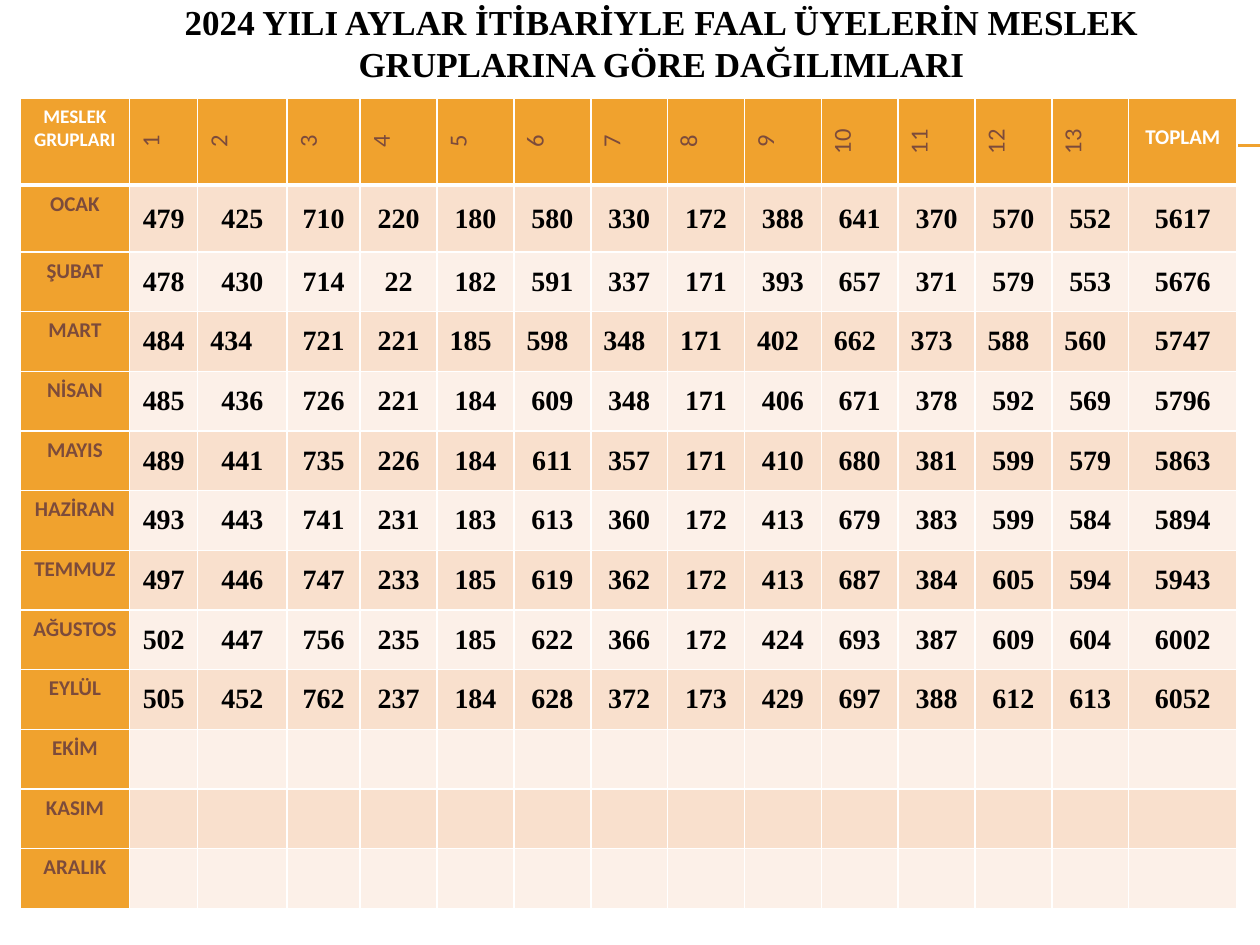
import pptx
import pptx.dml.color
import pptx.enum.shapes
import pptx.enum.text
import pptx.oxml.ns
import pptx.util
from lxml import etree

Inches = pptx.util.Inches
Pt = pptx.util.Pt
RGBColor = pptx.dml.color.RGBColor
ALIGN = pptx.enum.text.PP_ALIGN
ANCHOR = pptx.enum.text.MSO_ANCHOR

ORANGE = RGBColor(0xF0, 0xA2, 0x2E)
BROWN = RGBColor(0x7C, 0x4B, 0x3B)
PEACH = RGBColor(0xF9, 0xE0, 0xCD)
CREAM = RGBColor(0xFC, 0xF0, 0xE8)
WHITE = RGBColor(0xFF, 0xFF, 0xFF)
BLACK = RGBColor(0, 0, 0)

TITLE = "2024 YILI AYLAR İTİBARİYLE FAAL ÜYELERİN MESLEK GRUPLARINA GÖRE DAĞILIMLARI"
MONTHS = [
    ("OCAK", "479 425 710 220 180 580 330 172 388 641 370 570 552 5617"),
    ("ŞUBAT", "478 430 714 22 182 591 337 171 393 657 371 579 553 5676"),
    ("MART", "484 434 721 221 185 598 348 171 402 662 373 588 560 5747"),
    ("NİSAN", "485 436 726 221 184 609 348 171 406 671 378 592 569 5796"),
    ("MAYIS", "489 441 735 226 184 611 357 171 410 680 381 599 579 5863"),
    ("HAZİRAN", "493 443 741 231 183 613 360 172 413 679 383 599 584 5894"),
    ("TEMMUZ", "497 446 747 233 185 619 362 172 413 687 384 605 594 5943"),
    ("AĞUSTOS", "502 447 756 235 185 622 366 172 424 693 387 609 604 6002"),
    ("EYLÜL", "505 452 762 237 184 628 372 173 429 697 388 612 613 6052"),
    ("EKİM", ""),
    ("KASIM", ""),
    ("ARALIK", ""),
]
GROUP_COUNT = 13
LEFT_ALIGNED = {("MART", column) for column in (2, *range(5, GROUP_COUNT + 1))}
COLUMN_WIDTHS = [0.87, 0.54, 0.71, 0.58] + [0.61] * 10 + [0.86]
TABLE_HEIGHT = 6.43
TOP_ROWS = [0.69, 0.53]
MONTH_HEIGHT = (TABLE_HEIGHT - sum(TOP_ROWS)) / (len(MONTHS) - 1)
ROW_HEIGHTS = TOP_ROWS + [MONTH_HEIGHT] * (len(MONTHS) - 1)


class SlideBuilder:
    """Holds the text styles and the current slide, and adds elements to it."""

    styles = {
        "title": {"name": "Times New Roman", "size": Pt(20), "bold": True, "color": BLACK},
        "corner": {"name": "Calibri", "size": Pt(11), "bold": True, "color": WHITE},
        "group": {"name": "Calibri", "size": Pt(14), "bold": False, "color": BROWN},
        "total": {"name": "Calibri", "size": Pt(12), "bold": True, "color": WHITE},
        "month": {"name": "Calibri", "size": Pt(12), "bold": True, "color": BROWN},
        "value": {"name": "Times New Roman", "size": Pt(16), "bold": True, "color": BLACK},
    }

    def __init__(self, presentation):
        self.slide = presentation.slides.add_slide(presentation.slide_layouts[5])

    def add_text(self, text_frame, text, style, alignment=ALIGN.CENTER):
        paragraph = text_frame.paragraphs[0]
        paragraph.alignment = alignment
        run = paragraph.add_run()
        run.text = text
        for name, value in self.styles[style].items():
            if name == "color":
                run.font.color.rgb = value
            else:
                setattr(run.font, name, value)

    def title(self, text, left, top, width, height):
        shape = self.slide.shapes.title
        box = {"left": left, "top": top, "width": width, "height": height}
        for name, value in box.items():
            setattr(shape, name, Inches(value))
        frame = shape.text_frame
        layout = {
            "word_wrap": True,
            "auto_size": pptx.enum.text.MSO_AUTO_SIZE.NONE,
            "vertical_anchor": ANCHOR.MIDDLE,
        }
        for name, value in layout.items():
            setattr(frame, name, value)
        self.add_text(frame, text, "title")

    def rule(self, left, right, y):
        connector = self.slide.shapes.add_connector(
            pptx.enum.shapes.MSO_CONNECTOR.STRAIGHT,
            Inches(left), Inches(y), Inches(right), Inches(y),
        )
        connector.line.color.rgb = ORANGE
        connector.line.width = Pt(0.75)
        properties = connector.element.spPr
        etree.SubElement(properties, pptx.oxml.ns.qn("a:effectLst"))

    def table(self, left, top, widths, heights):
        frame = self.slide.shapes.add_table(
            len(heights), len(widths), Inches(left), Inches(top),
            Inches(sum(widths)), Inches(sum(heights)),
        )
        table = frame.table
        table.horz_banding = False
        for column, width in zip(table.columns, widths):
            column.width = Inches(width)
        for row, height in zip(table.rows, heights):
            row.height = Inches(height)
        return table

    def cell(self, cell, fill, text="", style="value", alignment=ALIGN.CENTER,
             anchor=ANCHOR.TOP, top_border=1, bottom_border=1):
        cell.vertical_anchor = anchor
        properties = cell._tc.get_or_add_tcPr()
        borders = {"lnL": 1, "lnR": 1, "lnT": top_border, "lnB": bottom_border}
        for tag, width in borders.items():
            line = etree.SubElement(
                properties, pptx.oxml.ns.qn(f"a:{tag}"), w=str(Pt(width))
            )
            paint = etree.SubElement(line, pptx.oxml.ns.qn("a:solidFill"))
            etree.SubElement(paint, pptx.oxml.ns.qn("a:srgbClr"), val=str(WHITE))
        cell.fill.solid()
        cell.fill.fore_color.rgb = fill
        if style == "group":
            properties.set("vert", "vert270")
        if text:
            self.add_text(cell.text_frame, text, style, alignment)


def fill_header(builder, table):
    total_column = GROUP_COUNT + 1
    builder.cell(table.cell(0, 0), ORANGE, "MESLEK GRUPLARI", "corner", bottom_border=3)
    for group in range(1, total_column):
        builder.cell(table.cell(0, group), ORANGE, str(group), "group", bottom_border=3)
    total = table.cell(0, total_column)
    builder.cell(total, ORANGE, "TOPLAM", "total", anchor=ANCHOR.BOTTOM, bottom_border=3)
    total.margin_bottom = Inches(0.28)


def fill_months(builder, table):
    for row, (month, numbers) in enumerate(MONTHS, start=1):
        top_border = 3 if row == 1 else 1
        builder.cell(table.cell(row, 0), ORANGE, month, "month", top_border=top_border)
        values = numbers.split() or [""] * (GROUP_COUNT + 1)
        for column, value in enumerate(values, start=1):
            is_left = (month, column) in LEFT_ALIGNED
            builder.cell(
                table.cell(row, column), PEACH if row % 2 else CREAM, value,
                alignment=ALIGN.LEFT if is_left else ALIGN.CENTER,
                anchor=ANCHOR.MIDDLE, top_border=top_border,
            )


def main():
    presentation = pptx.Presentation()
    presentation.slide_width = Inches(10)
    presentation.slide_height = Inches(7.5)
    builder = SlideBuilder(presentation)
    for y in (1.15, 1.16):
        builder.rule(0.56, 10, y)
    builder.title(TITLE, 0.5, 0, 9.5, 0.67)
    table = builder.table(0.16, 0.78, COLUMN_WIDTHS, ROW_HEIGHTS)
    fill_header(builder, table)
    fill_months(builder, table)
    presentation.save("out.pptx")


if __name__ == "__main__":
    main()
